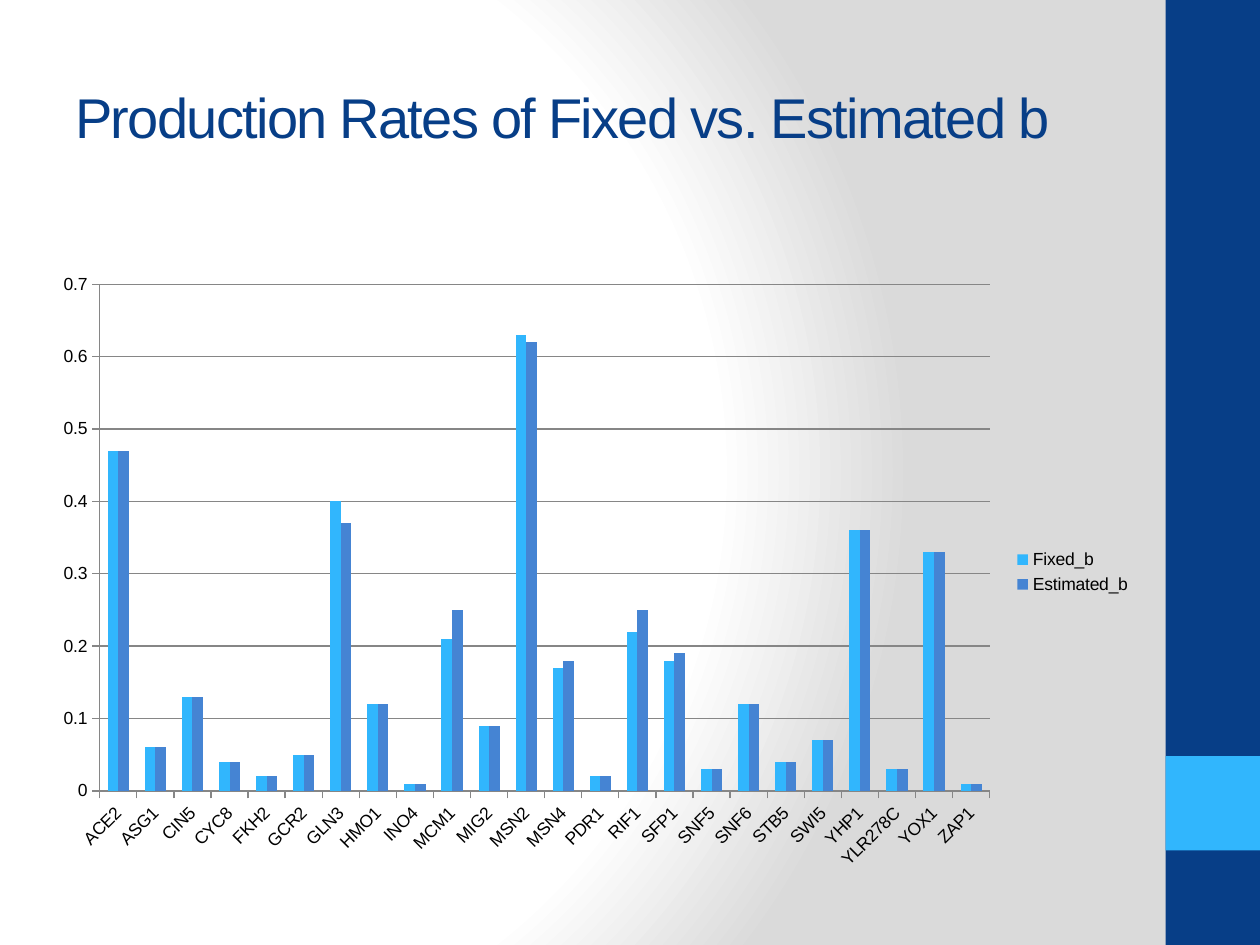
"""Build a slide comparing production rates of fixed and estimated b."""
import lxml.etree
import pptx
import pptx.chart.data
import pptx.dml.color
import pptx.enum.chart
import pptx.enum.shapes
import pptx.enum.text
import pptx.oxml
import pptx.oxml.ns
import pptx.util

NAVY = pptx.dml.color.RGBColor(0x07, 0x3E, 0x87)
SKY = pptx.dml.color.RGBColor(0x31, 0xB6, 0xFD)
BLUE = pptx.dml.color.RGBColor(0x45, 0x84, 0xD3)
GRAY = pptx.dml.color.RGBColor(0x86, 0x86, 0x86)
BLACK = pptx.dml.color.RGBColor(0, 0, 0)
FONT = "Arial"

deck = pptx.Presentation()
deck.slide_width = pptx.util.Inches(10)
deck.slide_height = pptx.util.Inches(7.5)
WIDTH, HEIGHT = deck.slide_width, deck.slide_height
UNIT = HEIGHT // 10
slide = deck.slides.add_slide(deck.slide_layouts[6])


def add_text(text, left, top, width, height, size, color, spacing):
    box = slide.shapes.add_textbox(left, top, width, height)
    frame = box.text_frame
    frame.word_wrap = True
    frame.vertical_anchor = pptx.enum.text.MSO_ANCHOR.MIDDLE
    run = frame.paragraphs[0].add_run()
    run.text = text
    run.font.name = FONT
    run.font.size = pptx.util.Pt(size)
    run.font.color.rgb = color
    run.font._element.set("spc", str(spacing * 100))


slide.background.fill.gradient()
gradient = slide.background._cSld.bg.bgPr.find(pptx.oxml.ns.qn("a:gradFill"))
glow = pptx.oxml.parse_xml(
    f'<a:gradFill {pptx.oxml.ns.nsdecls("a")} rotWithShape="1"><a:gsLst>'
    + "".join(
        f'<a:gs pos="{share * 1000}"><a:srgbClr val="{tone}"/></a:gs>'
        for share, tone in ((0, "FFFFFF"), (75, "FFFFFF"), (100, "DADADA"))
    )
    + '</a:gsLst><a:path path="circle">'
    '<a:fillToRect l="20000" t="50000" r="100000" b="50000"/></a:path></a:gradFill>'
)
gradient.getparent().replace(gradient, glow)

for row, rows, color in ((0, 10, NAVY), (8, 1, SKY)):
    band = slide.shapes.add_shape(
        pptx.enum.shapes.MSO_SHAPE.RECTANGLE,
        WIDTH - UNIT, row * UNIT, UNIT, rows * UNIT,
    )
    band.shadow.inherit = False
    band.fill.solid()
    band.fill.fore_color.rgb = color
    band.line.fill.background()

add_text(
    "Production Rates of Fixed vs. Estimated b",
    left=int(WIDTH * 0.05), top=int(HEIGHT * 0.04),
    width=pptx.util.Inches(8.33), height=pptx.util.Inches(1.25),
    size=32, color=NAVY, spacing=-1,
)

rates = (
    ("ACE2", 0.47, 0.47), ("ASG1", 0.06, 0.06), ("CIN5", 0.13, 0.13),
    ("CYC8", 0.04, 0.04), ("FKH2", 0.02, 0.02), ("GCR2", 0.05, 0.05),
    ("GLN3", 0.4, 0.37), ("HMO1", 0.12, 0.12), ("INO4", 0.01, 0.01),
    ("MCM1", 0.21, 0.25), ("MIG2", 0.09, 0.09), ("MSN2", 0.63, 0.62),
    ("MSN4", 0.17, 0.18), ("PDR1", 0.02, 0.02), ("RIF1", 0.22, 0.25),
    ("SFP1", 0.18, 0.19), ("SNF5", 0.03, 0.03), ("SNF6", 0.12, 0.12),
    ("STB5", 0.04, 0.04), ("SWI5", 0.07, 0.07), ("YHP1", 0.36, 0.36),
    ("YLR278C", 0.03, 0.03), ("YOX1", 0.33, 0.33), ("ZAP1", 0.01, 0.01),
)
genes, fixed, estimated = zip(*rates)
rate_data = pptx.chart.data.CategoryChartData()
rate_data.categories = genes
rate_data.add_series("Fixed_b", fixed)
rate_data.add_series("Estimated_b", estimated)

chart = slide.shapes.add_chart(
    pptx.enum.chart.XL_CHART_TYPE.COLUMN_CLUSTERED,
    pptx.util.Inches(0.33), pptx.util.Inches(2.08),
    pptx.util.Inches(8.75), pptx.util.Inches(4.92), rate_data,
).chart
chart.has_title = False
chart.font.name = FONT
chart.font.size = pptx.util.Pt(10)
chart.font.color.rgb = BLACK
chart.has_legend = True
chart.legend.position = pptx.enum.chart.XL_LEGEND_POSITION.RIGHT
chart.legend.include_in_layout = False

plot = chart.plots[0]
plot.gap_width = 150
plot.overlap = 0
plot.vary_by_categories = False
for series, color in zip(plot.series, (SKY, BLUE)):
    series.format.fill.solid()
    series.format.fill.fore_color.rgb = color
    series.invert_if_negative = False

gene_axis, rate_axis = chart.category_axis, chart.value_axis
rate_axis.minimum_scale = 0
rate_axis.maximum_scale = 0.7
rate_axis.major_unit = 0.1
rate_axis.has_major_gridlines = True
for axis in (gene_axis, rate_axis):
    axis.major_tick_mark = pptx.enum.chart.XL_TICK_MARK.OUTSIDE
    axis.minor_tick_mark = pptx.enum.chart.XL_TICK_MARK.NONE
    axis.tick_labels.font.size = pptx.util.Pt(10)
    axis.tick_labels.number_format = "General"
    axis.tick_labels.number_format_is_linked = False
for rule in (gene_axis, rate_axis, rate_axis.major_gridlines):
    rule.format.line.color.rgb = GRAY
    rule.format.line.width = pptx.util.Pt(0.75)
gene_label_body = gene_axis._element.find(".//" + pptx.oxml.ns.qn("a:bodyPr"))
gene_label_body.set("rot", str(-45 * 60000))

deck.save("out.pptx")
